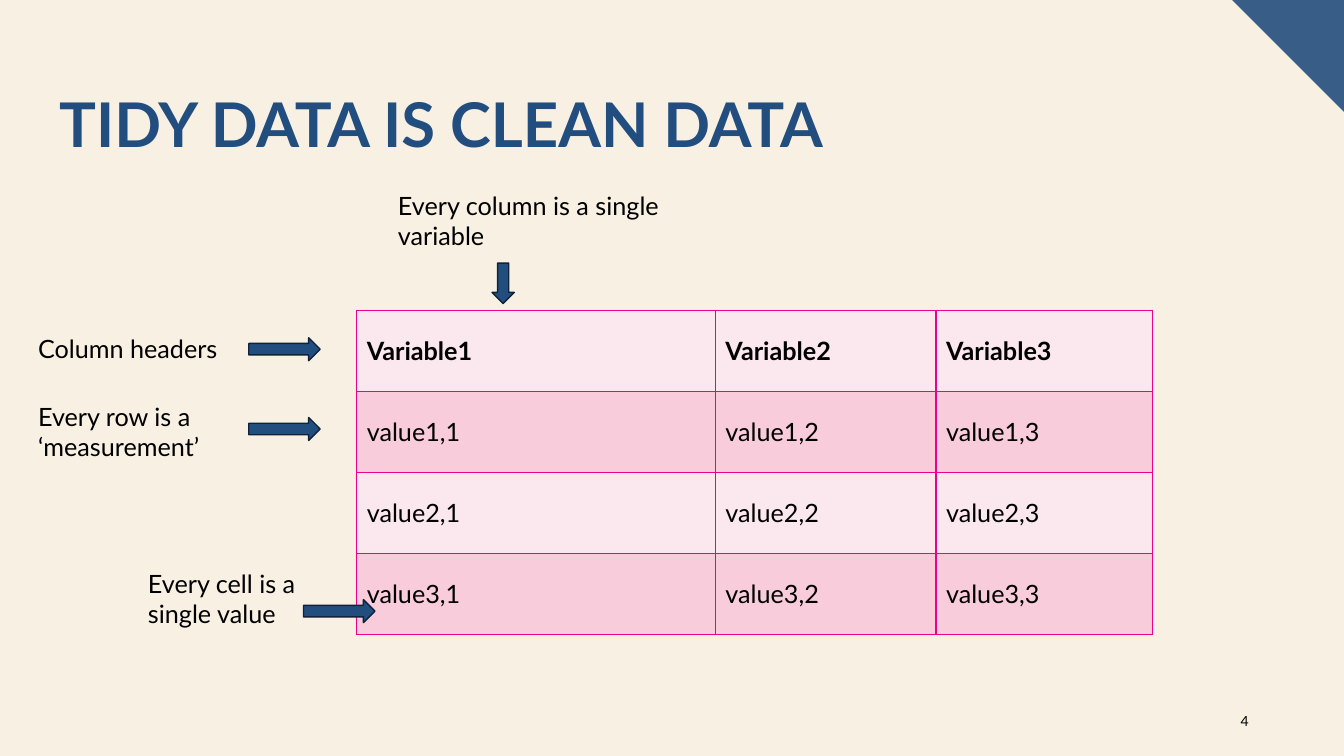
from lxml import etree
from pptx import Presentation
from pptx.dml.color import RGBColor
from pptx.enum.shapes import MSO_SHAPE
from pptx.enum.text import MSO_ANCHOR, PP_ALIGN
from pptx.oxml.ns import qn
from pptx.util import Cm, Pt

RIGHT_ARROW = MSO_SHAPE.RIGHT_ARROW
TOP, MIDDLE = MSO_ANCHOR.TOP, MSO_ANCHOR.MIDDLE
LEFT, RIGHT = PP_ALIGN.LEFT, PP_ALIGN.RIGHT
FONT = "Lato"
CREAM = RGBColor(0xF8, 0xF0, 0xE3)
CORNER_BLUE = RGBColor(0x38, 0x5E, 0x88)
BLUE = RGBColor(0x22, 0x4E, 0x7F)
DARK_BLUE = RGBColor(0x0F, 0x22, 0x38)
BLACK = RGBColor(0, 0, 0)
MAGENTA = RGBColor(0xEC, 0x00, 0x8C)
LIGHT_PINK = RGBColor(0xFB, 0xE7, 0xEE)
PINK = RGBColor(0xF8, 0xCC, 0xDA)


def add_run(paragraph, text, size=18, color=BLACK, bold=False):
    run = paragraph.add_run()
    run.text = text
    run.font.name = FONT
    run.font.size = Pt(size)
    run.font.bold = bold
    run.font.color.rgb = color


def add_text(box, text, anchor=TOP, align=LEFT, **style):
    shape = slide.shapes.add_textbox(*[Cm(length) for length in box])
    shape.text_frame.word_wrap = True
    shape.text_frame.vertical_anchor = anchor
    paragraph = shape.text_frame.paragraphs[0]
    paragraph.alignment = align
    add_run(paragraph, text, **style)
    return paragraph


presentation = Presentation()
presentation.slide_width = Cm(33.87)
presentation.slide_height = Cm(19.05)
slide = presentation.slides.add_slide(presentation.slide_layouts[6])
slide.background.fill.solid()
slide.background.fill.fore_color.rgb = CREAM

builder = slide.shapes.build_freeform(Cm(31.05), 0)
builder.add_line_segments([(Cm(33.87), 0), (Cm(33.87), Cm(2.82))], close=True)
corner = builder.convert_to_shape()
corner.shadow.inherit = False
corner.fill.solid()
corner.fill.fore_color.rgb = CORNER_BLUE
corner.line.fill.background()

title = add_text((1.24, 2.24, 29.62, 3.68), "TIDY DATA IS CLEAN DATA",
                 size=44, color=BLUE, bold=True)
title.line_spacing = 0.9

column_widths = [9.04, 5.56, 5.46]
row_height = 2.04
rows = [[f"Variable{column}" for column in range(1, 4)]]
rows += [[f"value{row},{column}" for column in range(1, 4)] for row in range(1, 4)]
table = slide.shapes.add_table(
    len(rows), len(column_widths), Cm(8.99), Cm(7.82),
    Cm(sum(column_widths)), Cm(row_height * len(rows))).table
table.first_row = False
table.horz_banding = False
for column, width in zip(table.columns, column_widths):
    column.width = Cm(width)
for row_index, values in enumerate(rows):
    table.rows[row_index].height = Cm(row_height)
    for column_index, value in enumerate(values):
        cell = table.cell(row_index, column_index)
        cell.vertical_anchor = MIDDLE
        properties = cell._tc.get_or_add_tcPr()
        for side in ("a:lnL", "a:lnR", "a:lnT", "a:lnB"):
            border = etree.SubElement(properties, qn(side), w=str(Pt(1)))
            border_fill = etree.SubElement(border, qn("a:solidFill"))
            etree.SubElement(border_fill, qn("a:srgbClr"), val=str(MAGENTA))
        cell.fill.solid()
        cell.fill.fore_color.rgb = PINK if row_index % 2 else LIGHT_PINK
        add_run(cell.text_frame.paragraphs[0], value, bold=row_index == 0)

add_text((30.45, 17.65, 1.27, 1.02), "4", anchor=MIDDLE, align=RIGHT, size=10)

labels = [
    ((0.71, 8.28, 6.2, 1.02), "Column headers"),
    ((0.71, 9.98, 8.28, 1.8), "Every row is a ‘measurement’"),
    ((9.78, 4.67, 7.16, 1.8), "Every column is a single variable"),
    ((3.48, 14.2, 5.59, 1.8), "Every cell is a single value"),
]
for box, text in labels:
    add_text(box, text)

arrows = [
    ((6.27, 8.51, 1.8, 0.58), 0),
    ((6.27, 10.52, 1.8, 0.58), 0),
    ((12.17, 6.86, 1.02, 0.56), 90),
    ((7.65, 15.11, 1.8, 0.58), 0),
]
for box, rotation in arrows:
    arrow = slide.shapes.add_shape(RIGHT_ARROW, *[Cm(length) for length in box])
    arrow.rotation = rotation
    arrow.shadow.inherit = False
    arrow.fill.solid()
    arrow.fill.fore_color.rgb = BLUE
    arrow.line.color.rgb = DARK_BLUE
    arrow.line.width = Pt(1)

presentation.save("out.pptx")
